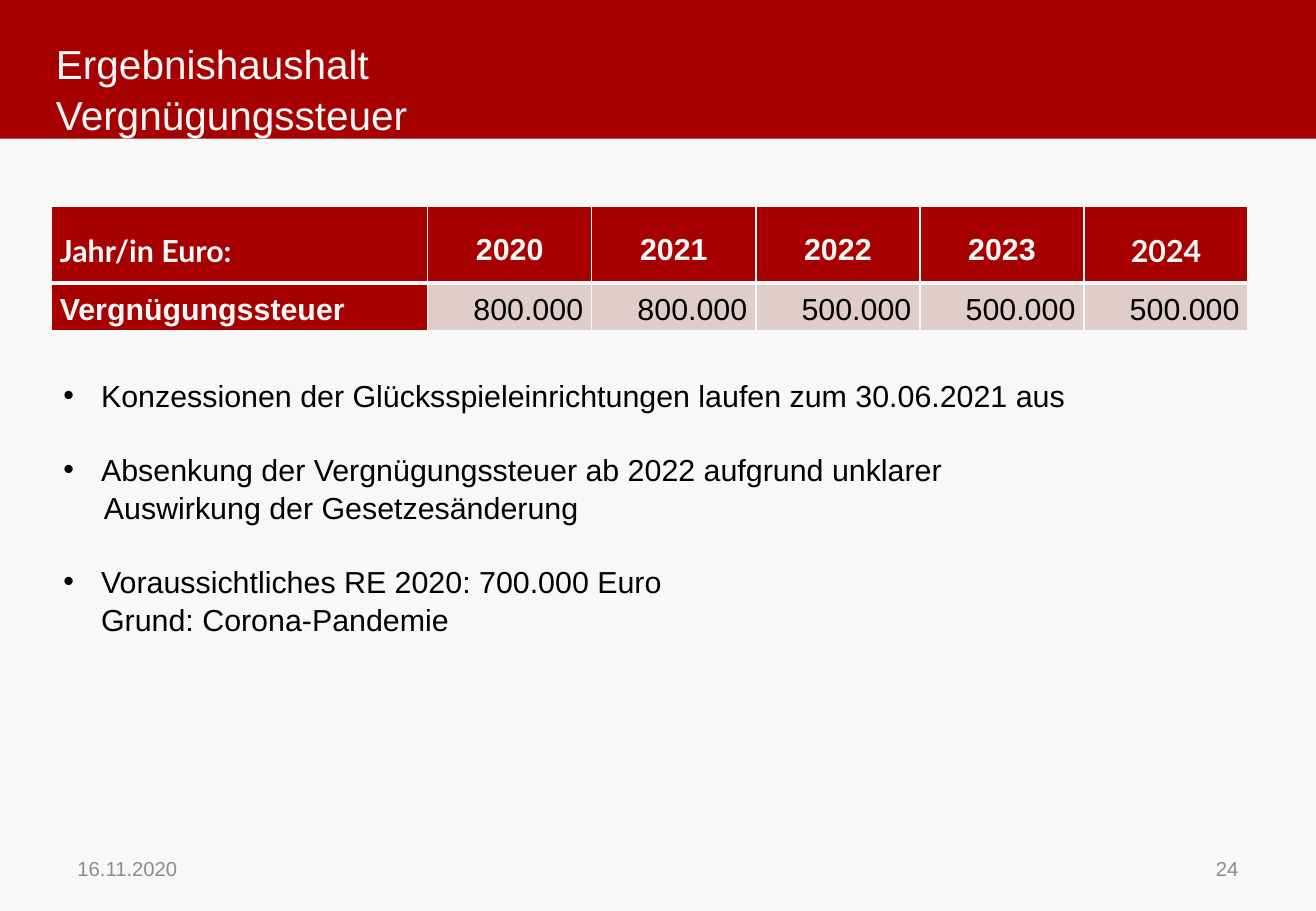
from dataclasses import dataclass

from lxml.etree import SubElement
from pptx import Presentation
from pptx.dml.color import RGBColor
from pptx.enum.shapes import MSO_SHAPE
from pptx.enum.text import MSO_ANCHOR, MSO_AUTO_SIZE, PP_ALIGN
from pptx.oxml.ns import qn
from pptx.slide import Slide
from pptx.text.text import _Paragraph
from pptx.util import Cm, Pt


@dataclass(frozen=True)
class Theme:
    red: RGBColor = RGBColor(0xA6, 0x00, 0x00)
    pale_red: RGBColor = RGBColor(0xE1, 0xCC, 0xCC)
    paper: RGBColor = RGBColor(0xF8, 0xF8, 0xF8)
    ink: RGBColor = RGBColor(0x00, 0x00, 0x00)
    grey: RGBColor = RGBColor(0x8C, 0x8C, 0x8C)
    font: str = "Arial"
    accent_font: str = "Lato"
    title_size: int = 24
    text_size: int = 18
    footer_size: int = 12


@dataclass(frozen=True)
class Point:
    text: str
    bullet: bool = True
    indent: float = 0.79
    gap: float = 0


@dataclass(frozen=True)
class Footer:
    text: str
    left: float
    align: PP_ALIGN


@dataclass(frozen=True)
class TableCell:
    text: str
    align: PP_ALIGN
    fill: RGBColor
    color: RGBColor
    bold: bool
    font: str = "Arial"


THEME = Theme()
WIDTH, HEIGHT = 27.51, 19.05
LINE_SPACING = 1.04

POINTS = [
    Point("Konzessionen der Glücksspieleinrichtungen laufen zum 30.06.2021 aus"),
    Point("Absenkung der Vergnügungssteuer ab 2022 aufgrund unklarer", gap=21.6),
    Point("Auswirkung der Gesetzesänderung", bullet=False, indent=0.85),
    Point("Voraussichtliches RE 2020: 700.000 Euro\vGrund: Corona-Pandemie", gap=21.6),
]
FOOTERS = [
    Footer("16.11.2020", 1.37, PP_ALIGN.LEFT),
    Footer("24", 19.71, PP_ALIGN.RIGHT),
]
TAX_BY_YEAR = {
    "2020": "800.000",
    "2021": "800.000",
    "2022": "500.000",
    "2023": "500.000",
    "2024": "500.000",
}


def format_text(paragraph: _Paragraph, size: int, color: RGBColor,
                bold: bool = False, font: str = THEME.font) -> None:
    paragraph.font.name = font
    paragraph.font.size = Pt(size)
    paragraph.font.color.rgb = color
    paragraph.font.bold = bold


def add_title(slide: Slide) -> None:
    """Fill the title and lay the red band behind it."""
    title = slide.shapes.title
    band = slide.shapes.add_shape(MSO_SHAPE.RECTANGLE, 0, 0, Cm(WIDTH), Cm(2.9))
    band.shadow.inherit = False
    band.fill.solid()
    band.fill.fore_color.rgb = THEME.red
    band.line.fill.background()
    title._element.addprevious(band._element)

    title.left, title.top, title.width, title.height = Cm(1.17), Cm(0.91), Cm(16.28), Cm(1.85)
    frame = title.text_frame
    frame.margin_left = frame.margin_right = frame.margin_top = frame.margin_bottom = 0
    frame.vertical_anchor = MSO_ANCHOR.MIDDLE
    frame.auto_size = MSO_AUTO_SIZE.NONE
    heading = frame.paragraphs[0]
    heading.text = "Ergebnishaushalt\vVergnügungssteuer"
    heading.alignment = PP_ALIGN.LEFT
    heading.line_spacing = LINE_SPACING
    format_text(heading, THEME.title_size, THEME.paper)


def table_rows() -> list[list[TableCell]]:
    header = [TableCell("Jahr/in Euro:", PP_ALIGN.LEFT, THEME.red, THEME.paper, True,
                        THEME.accent_font)]
    taxes = [TableCell("Vergnügungssteuer", PP_ALIGN.LEFT, THEME.red, THEME.paper, True)]
    for year, tax in TAX_BY_YEAR.items():
        year_font = THEME.accent_font if year == "2024" else THEME.font
        header.append(TableCell(year, PP_ALIGN.CENTER, THEME.red, THEME.paper, True, year_font))
        taxes.append(TableCell(tax, PP_ALIGN.RIGHT, THEME.pale_red, THEME.ink, False))
    return [header, taxes]


def add_tax_table(slide: Slide) -> None:
    rows = table_rows()
    table = slide.shapes.add_table(len(rows), len(rows[0]), Cm(1.07), Cm(4.32),
                                   Cm(25.02), Cm(2.59)).table
    table.horz_banding = False
    for column_index, column in enumerate(table.columns):
        column.width = Cm(3.43 if column_index else 7.87)
    for row, height in zip(table.rows, (1.6, 0.99)):
        row.height = Cm(height)

    for row_index, row_cells in enumerate(rows):
        for column_index, content in enumerate(row_cells):
            cell = table.cell(row_index, column_index)
            cell.margin_left = cell.margin_right = Cm(0.18)
            cell.margin_top = cell.margin_bottom = 0
            cell.vertical_anchor = MSO_ANCHOR.TOP if row_index else MSO_ANCHOR.MIDDLE
            # Borders must precede the fill in the cell properties.
            properties = cell._tc.get_or_add_tcPr()
            for side in ("lnL", "lnR", "lnT", "lnB"):
                at_rule = (row_index, side) in ((0, "lnB"), (1, "lnT"))
                border = SubElement(properties, qn(f"a:{side}"), w=str(Pt(3 if at_rule else 1)))
                border_fill = SubElement(border, qn("a:solidFill"))
                SubElement(border_fill, qn("a:srgbClr"), val=str(THEME.paper))
            cell.fill.solid()
            cell.fill.fore_color.rgb = content.fill
            entry = cell.text_frame.paragraphs[0]
            entry.text = content.text
            entry.alignment = content.align
            entry.line_spacing = 1.3
            format_text(entry, THEME.text_size, content.color, content.bold, content.font)


def add_points(slide: Slide) -> None:
    body = slide.placeholders[1]
    body.left, body.top, body.width, body.height = Cm(1.07), Cm(7.72), Cm(23.85), Cm(5.64)
    frame = body.text_frame
    frame.auto_size = MSO_AUTO_SIZE.SHAPE_TO_FIT_TEXT
    for index, point in enumerate(POINTS):
        line = frame.add_paragraph() if index else frame.paragraphs[0]
        line.text = point.text
        line.line_spacing = LINE_SPACING
        line.space_before = Pt(point.gap)
        properties = line._p.get_or_add_pPr()
        properties.set("marL", str(Cm(point.indent)))
        properties.set("indent", str(-Cm(point.indent) if point.bullet else 0))
        if point.bullet:
            SubElement(properties, qn("a:buFont"), typeface=THEME.font)
            SubElement(properties, qn("a:buChar"), char="•")
        else:
            SubElement(properties, qn("a:buNone"))
        format_text(line, THEME.text_size, THEME.ink)


def add_footer(slide: Slide, footer: Footer) -> None:
    frame = slide.shapes.add_textbox(Cm(footer.left), Cm(17.65), Cm(6.43), Cm(1.02)).text_frame
    frame.word_wrap = True
    frame.vertical_anchor = MSO_ANCHOR.MIDDLE
    note = frame.paragraphs[0]
    note.text = footer.text
    note.alignment = footer.align
    format_text(note, THEME.footer_size, THEME.grey)


def main() -> None:
    presentation = Presentation()
    presentation.slide_width, presentation.slide_height = Cm(WIDTH), Cm(HEIGHT)
    slide = presentation.slides.add_slide(presentation.slide_layouts[1])
    slide.background.fill.solid()
    slide.background.fill.fore_color.rgb = THEME.paper
    add_title(slide)
    add_tax_table(slide)
    add_points(slide)
    for footer in FOOTERS:
        add_footer(slide, footer)
    presentation.save("out.pptx")


if __name__ == "__main__":
    main()
